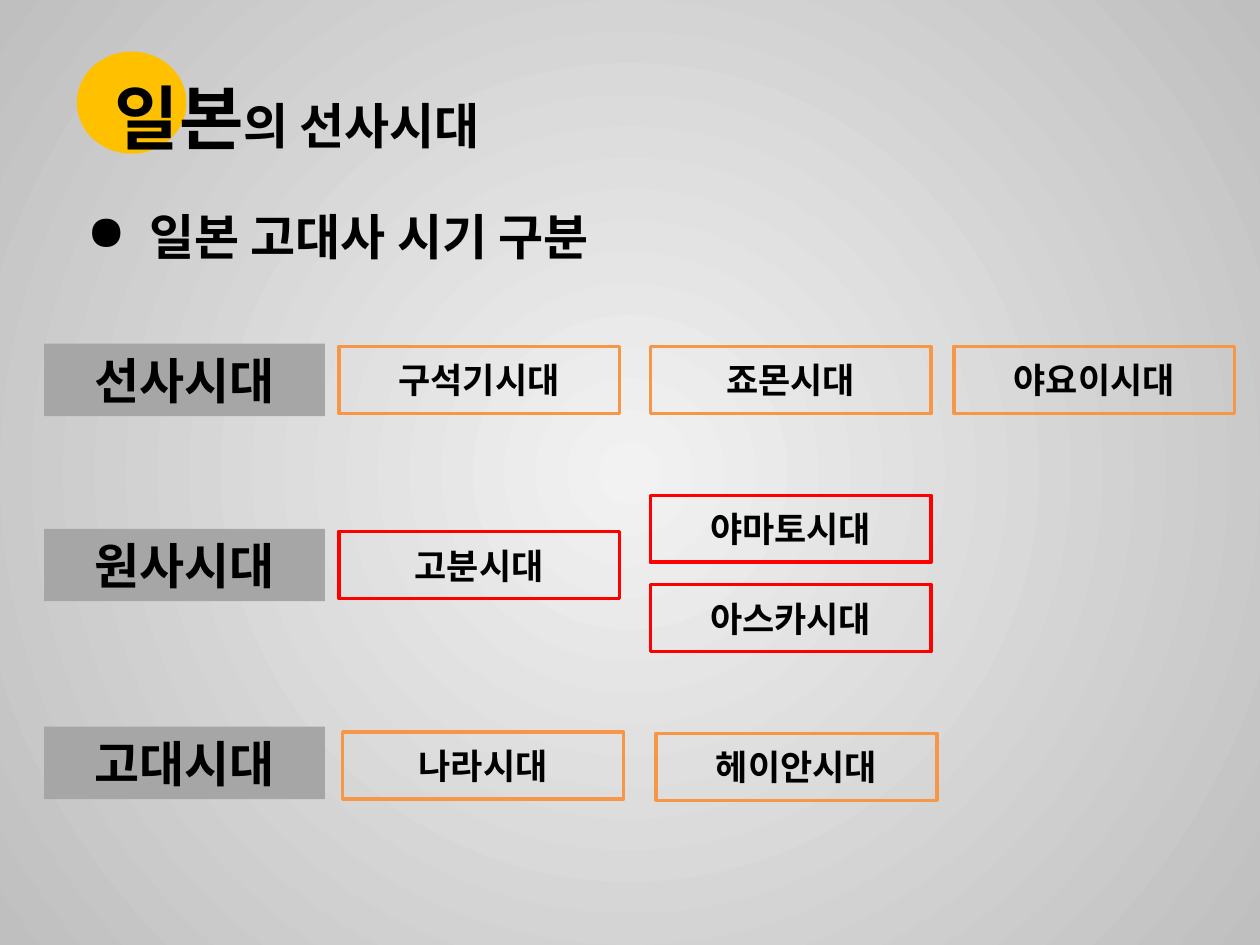
from dataclasses import dataclass

from lxml import etree
from pptx import Presentation
from pptx.dml.color import RGBColor
from pptx.enum.shapes import MSO_SHAPE
from pptx.enum.text import MSO_ANCHOR, PP_ALIGN
from pptx.oxml.ns import qn
from pptx.util import Cm, Pt

RECT, OVAL = MSO_SHAPE.RECTANGLE, MSO_SHAPE.OVAL
MIDDLE = MSO_ANCHOR.MIDDLE
CENTER, LEFT = PP_ALIGN.CENTER, PP_ALIGN.LEFT


@dataclass(frozen=True)
class Theme:
    font: str = "Noto Sans CJK KR"
    text: str = "000000"
    bg_center: str = "F2F2F2"
    bg_edge: str = "BFBFBF"
    sun: str = "FFC000"
    label: str = "A6A6A6"
    orange: str = "F79646"
    red: str = "FF0000"
    title: int = 40
    heading: int = 28
    era: int = 20
    border: int = 2


T = Theme()

# Sizes and columns in cm; boxes are placed by their vertical centre
BOX_W, LABEL_H, ERA_H = 5.66, 1.46, 1.35
LABEL_X = 0.89
COLS = (6.83, 13.11, 19.23)

# Each period: name, centre, border colour, eras as (name, left, centre)
PERIODS = (
    ("선사시대", 7.66, T.orange, (
        ("구석기시대", COLS[0], 7.66),
        ("죠몬시대", COLS[1], 7.66),
        ("야요이시대", COLS[2], 7.66))),
    ("원사시대", 11.39, T.red, (
        ("고분시대", COLS[0], 11.39),
        ("야마토시대", COLS[1], 10.66),
        ("아스카시대", COLS[1], 12.46))),
    ("고대시대", 15.38, T.orange, (
        ("나라시대", 6.91, 15.43),
        ("헤이안시대", 13.23, 15.46))),
)


def rgb(color):
    return RGBColor.from_string(color)


def set_background(s):
    fill = s.background.fill
    fill.gradient()
    for stop, color in zip(fill.gradient_stops, (T.bg_center, T.bg_edge)):
        stop.color.rgb = rgb(color)
    # Radial gradient from the centre of the slide
    grad = s.element.find(".//" + qn("a:gradFill"))
    grad.remove(grad.find(qn("a:lin")))
    radial = etree.SubElement(grad, qn("a:path"), {"path": "circle"})
    etree.SubElement(radial, qn("a:fillToRect"),
                     {side: "50000" for side in "ltrb"})


def write(sp, runs, align=CENTER):
    tf = sp.text_frame
    tf.word_wrap = True
    tf.vertical_anchor = MIDDLE
    p = tf.paragraphs[0]
    p.alignment = align
    for text, size in runs:
        r = p.add_run()
        r.text = text
        r.font.size = Pt(size)
        r.font.bold = True
        r.font.name = T.font
        r.font.color.rgb = rgb(T.text)
        etree.SubElement(r.font._element, qn("a:ea"), {"typeface": T.font})
    return p


def add_text(s, x, y, w, h, runs, align=CENTER):
    sp = s.shapes.add_textbox(Cm(x), Cm(y), Cm(w), Cm(h))
    return write(sp, runs, align)


def add_bullet(p, char, indent):
    pPr = p._p.get_or_add_pPr()
    pPr.set("marL", str(Cm(indent)))
    pPr.set("indent", str(-Cm(indent)))
    etree.SubElement(pPr, qn("a:buChar"), {"char": char})


def add_shape(s, kind, x, y, w, h, fill=None, line=None):
    sp = s.shapes.add_shape(kind, Cm(x), Cm(y), Cm(w), Cm(h))
    sp.shadow.inherit = False
    if fill:
        sp.fill.solid()
        sp.fill.fore_color.rgb = rgb(fill)
    else:
        sp.fill.background()
    if line:
        sp.line.color.rgb = rgb(line)
        sp.line.width = Pt(T.border)
    else:
        sp.line.fill.background()
    return sp


def add_box(s, text, x, center, h, size, **style):
    sp = add_shape(s, RECT, x, center - h / 2, BOX_W, h, **style)
    write(sp, [(text, size)])


def main():
    prs = Presentation()
    prs.slide_width, prs.slide_height = Cm(25.4), Cm(19.05)
    s = prs.slides.add_slide(prs.slide_layouts[6])
    set_background(s)

    # Title over the sun
    add_shape(s, OVAL, 1.55, 1.04, 2.21, 2.06, fill=T.sun)
    add_text(s, 1.5, 1.12, 8.99, 2.44,
             [("일본", T.title), ("의 선사시대", T.heading)])

    # Subtitle
    p = add_text(s, 1.5, 3.56, 11.71, 2.41,
                 [("일본 고대사 시기 구분", T.heading)], LEFT)
    add_bullet(p, "●", 1.27)

    # Periods and their eras
    for name, center, color, eras in PERIODS:
        add_box(s, name, LABEL_X, center, LABEL_H, T.heading, fill=T.label)
        for era, x, era_center in eras:
            add_box(s, era, x, era_center, ERA_H, T.era, line=color)

    prs.save("out.pptx")


if __name__ == "__main__":
    main()
